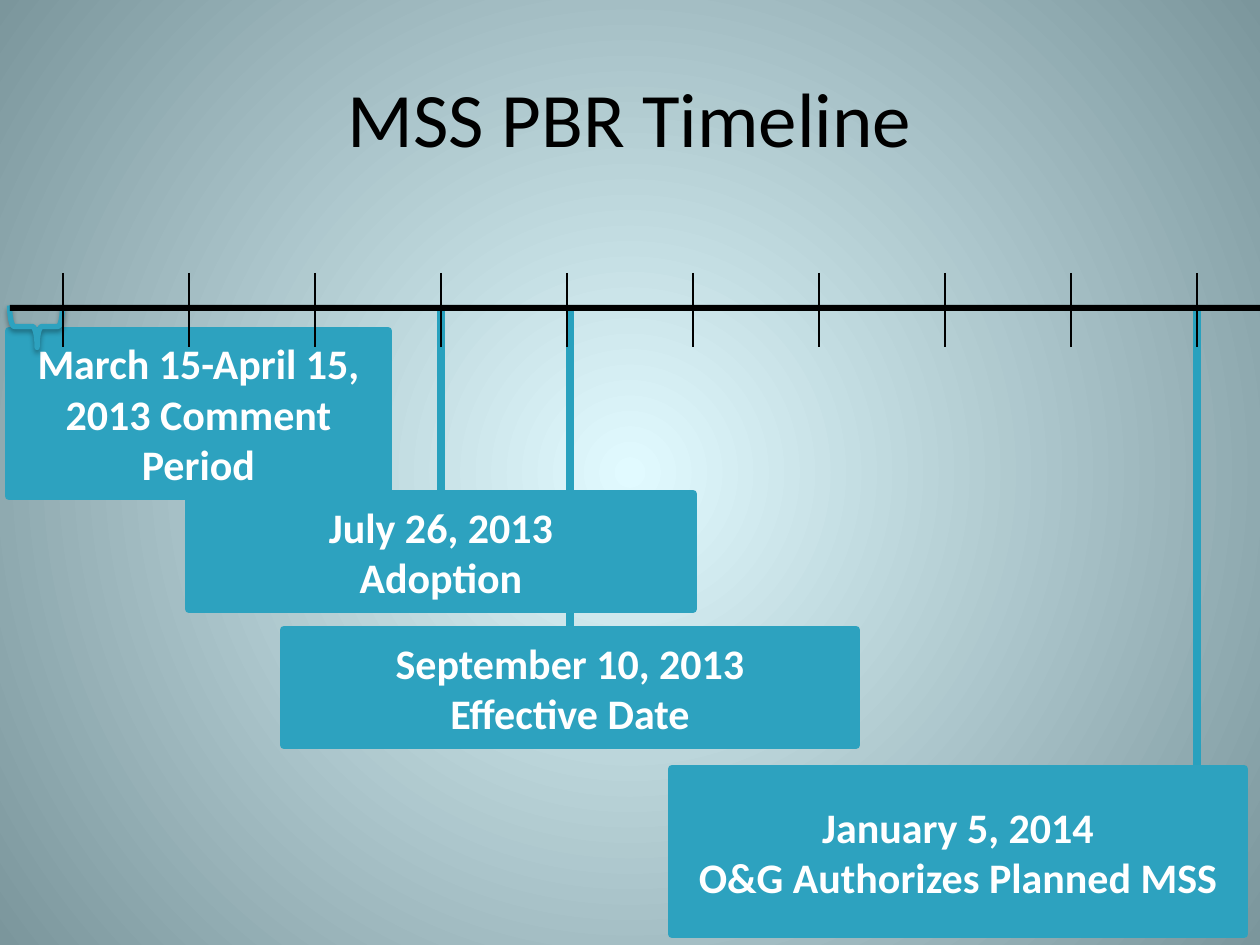
from dataclasses import dataclass
from typing import Optional

from lxml.etree import SubElement
from pptx import Presentation
from pptx.dml.color import RGBColor
from pptx.enum.shapes import MSO_CONNECTOR, MSO_SHAPE
from pptx.enum.text import MSO_ANCHOR, PP_ALIGN
from pptx.oxml.ns import qn
from pptx.util import Emu, Pt

PX = 914400 / 126
WIDTH, HEIGHT = 1260, 945
FONT = "Calibri"
COLORS = {
    "glow": "E1FAFF",
    "edge": "7B969C",
    "box": "2DA2BF",
    "stem": "28A1BE",
    "black": "000000",
    "white": "FFFFFF",
}
MONTH, FIRST_TICK, TICK_COUNT = 126, 63, 10
TICK_TOP, TICK_BOTTOM = 273, 347
AXIS_LEFT, AXIS_TOP, AXIS_THICKNESS = 10, 305, 6


@dataclass
class Milestone:
    text: str
    left: int
    top: int
    width: int
    height: int
    stem_x: Optional[int] = None


MILESTONES = [
    Milestone("January 5, 2014\nO&G Authorizes Planned MSS", 672, 769, 572, 165, 1197),
    Milestone("September 10, 2013\nEffective Date", 284, 630, 572, 115, 570),
    Milestone("July 26, 2013\nAdoption", 189, 494, 504, 115, 441),
    Milestone("March 15-April 15, 2013 Comment Period", 9, 331, 379, 165),
]


def px(length: int) -> Emu:
    return Emu(round(length * PX))


def rgb(name: str) -> RGBColor:
    return RGBColor.from_string(COLORS[name])


def paint_background(slide) -> None:
    """Fill the slide with a gradient spreading from its centre."""
    fill = slide.background.fill
    fill.gradient()
    for stop, name in zip(fill.gradient_stops, ("glow", "edge")):
        stop.color.rgb = rgb(name)
    gradient = slide._element.find(".//" + qn("a:gradFill"))
    gradient.remove(gradient.find(qn("a:lin")))
    circle = SubElement(gradient, qn("a:path"), {"path": "circle"})
    centre = {side: "50000" for side in "ltrb"}
    SubElement(circle, qn("a:fillToRect"), centre)


def add_line(slide, x: int, top: int, bottom: int, color: str, points: float) -> None:
    """Draw a vertical line."""
    line = slide.shapes.add_connector(
        MSO_CONNECTOR.STRAIGHT, px(x), px(top), px(x), px(bottom))
    line.line.color.rgb = rgb(color)
    line.line.width = Pt(points)
    SubElement(line._element.spPr, qn("a:effectLst"))


def write_text(shape, text: str, size: int, color: str, bold: bool) -> None:
    frame = shape.text_frame
    frame.word_wrap = True
    frame.vertical_anchor = MSO_ANCHOR.MIDDLE
    frame.text = text
    for paragraph in frame.paragraphs:
        paragraph.alignment = PP_ALIGN.CENTER
        for run in paragraph.runs:
            run.font.name = FONT
            run.font.size = Pt(size)
            run.font.bold = bold
            run.font.color.rgb = rgb(color)


def add_milestone(slide, milestone: Milestone) -> None:
    if milestone.stem_x is not None:
        add_line(slide, milestone.stem_x, AXIS_TOP + 3, milestone.top, "stem", 5)
    box = slide.shapes.add_shape(
        MSO_SHAPE.RECTANGLE, px(milestone.left), px(milestone.top),
        px(milestone.width), px(milestone.height))
    box.shadow.inherit = False
    box.fill.solid()
    box.fill.fore_color.rgb = rgb("box")
    box.line.color.rgb = rgb("box")
    box.line.width = Pt(5)
    write_text(box, milestone.text, 24, "white", True)


def add_period_brace(slide) -> None:
    brace = slide.shapes.add_shape(
        MSO_SHAPE.RIGHT_BRACE, px(15), px(300), px(42), px(53))
    brace.rotation = 90
    brace.adjustments[0] = 0.11
    brace.adjustments[1] = 0.48
    brace.fill.background()
    brace.line.color.rgb = rgb("box")
    brace.line.width = Pt(3)
    brace.shadow.inherit = False
    effects = brace._element.spPr.find(qn("a:effectLst"))
    shadow = SubElement(effects, qn("a:outerShdw"), {
        "blurRad": str(Pt(3.1)), "dist": str(Pt(1.8)),
        "dir": "5400000", "rotWithShape": "0"})
    tint = SubElement(shadow, qn("a:srgbClr"), {"val": COLORS["black"]})
    SubElement(tint, qn("a:alpha"), {"val": "35000"})


def add_axis(slide) -> None:
    axis = slide.shapes.add_shape(
        MSO_SHAPE.RECTANGLE, px(AXIS_LEFT), px(AXIS_TOP),
        px(WIDTH - AXIS_LEFT), px(AXIS_THICKNESS))
    axis.shadow.inherit = False
    axis.fill.solid()
    axis.fill.fore_color.rgb = rgb("black")
    axis.line.fill.background()
    for month in range(TICK_COUNT):
        add_line(slide, FIRST_TICK + month * MONTH, TICK_TOP, TICK_BOTTOM, "black", 0.75)


def main() -> None:
    deck = Presentation()
    deck.slide_width, deck.slide_height = px(WIDTH), px(HEIGHT)
    slide = deck.slides.add_slide(deck.slide_layouts[6])
    paint_background(slide)
    for milestone in MILESTONES:
        add_milestone(slide, milestone)
    add_period_brace(slide)
    add_axis(slide)
    title = slide.shapes.add_textbox(px(63), px(38), px(1134), px(157))
    write_text(title, "MSS PBR Timeline", 44, "black", False)
    deck.save("out.pptx")


if __name__ == "__main__":
    main()
